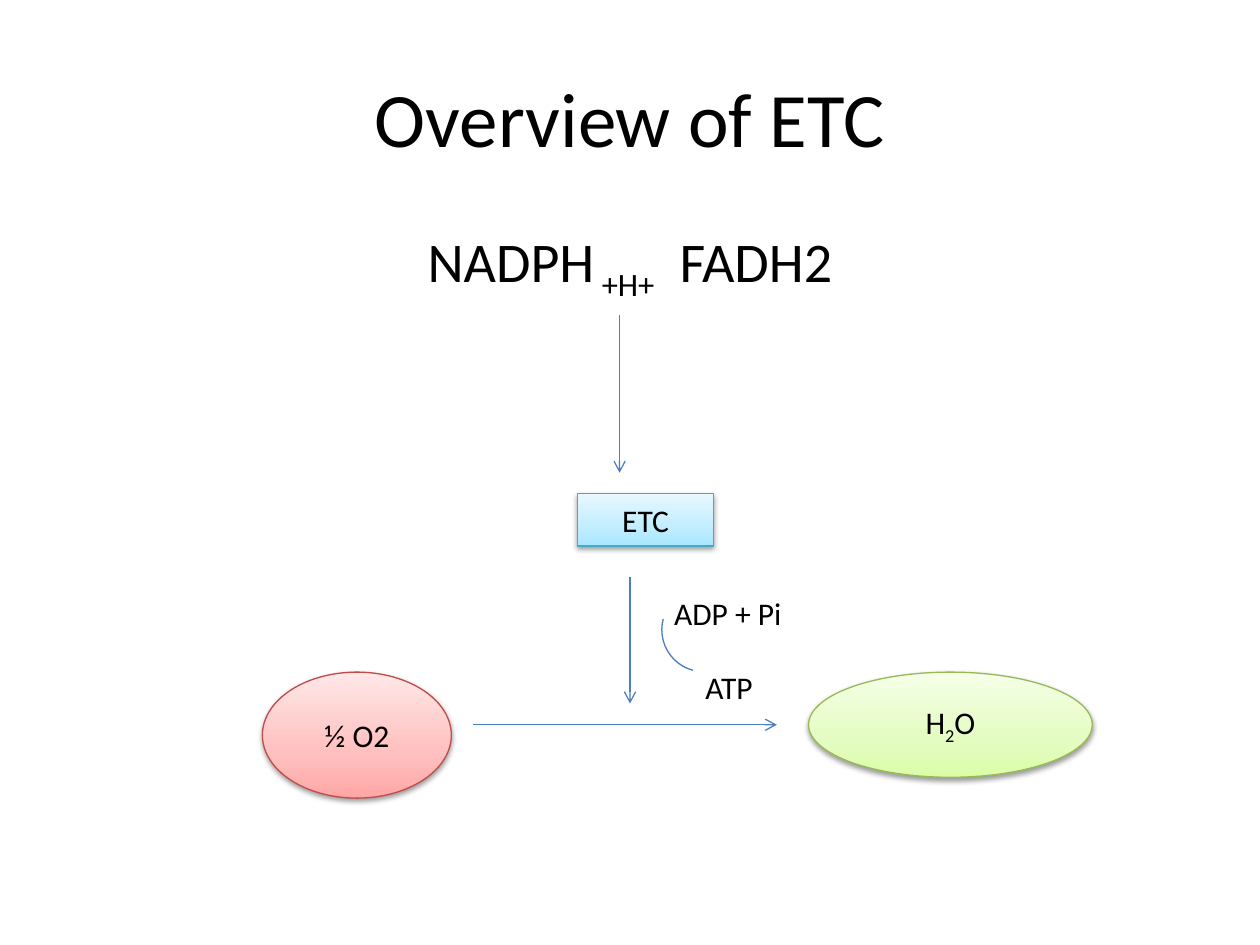
from copy import deepcopy
from dataclasses import dataclass

from lxml import etree
from pptx import Presentation
from pptx.dml.color import RGBColor
from pptx.enum.shapes import MSO_CONNECTOR, MSO_SHAPE as Shape
from pptx.enum.text import MSO_ANCHOR as Anchor, PP_ALIGN as Align
from pptx.oxml.ns import qn
from pptx.util import Cm, Pt

BLACK = RGBColor(0x00, 0x00, 0x00)
ARROW_BLUE = RGBColor(0x4B, 0x7E, 0xBC)
AQUA_LINE = RGBColor(0x46, 0xAA, 0xC5)
AQUA = (RGBColor(0xA7, 0xE6, 0xFF), RGBColor(0xC1, 0xED, 0xFF), RGBColor(0xE7, 0xF8, 0xFF))
RED_LINE = RGBColor(0xBF, 0x4C, 0x48)
RED = (RGBColor(0xFF, 0xA6, 0xA5), RGBColor(0xFF, 0xC0, 0xBF), RGBColor(0xFF, 0xE7, 0xE7))
GREEN_LINE = RGBColor(0x98, 0xB9, 0x55)
GREEN = (RGBColor(0xDA, 0xFD, 0xA7), RGBColor(0xE4, 0xFC, 0xC2), RGBColor(0xF5, 0xFF, 0xE7))

FONT = "Calibri"
LINE_WIDTH = Pt(0.75)
STOP_POSITIONS = (0, 0.35, 1)


@dataclass(frozen=True)
class Piece:
    text: str
    subscript: bool = False
    spacing: float = 0  # extra points after each character


@dataclass(frozen=True)
class Box:
    left: float
    top: float
    width: float
    height: float

    def lengths(self) -> list:
        return [Cm(v) for v in (self.left, self.top, self.width, self.height)]


@dataclass(frozen=True)
class Label:
    box: Box
    pieces: tuple
    size: int = 18
    align: Align = Align.LEFT
    anchor: Anchor = Anchor.TOP


@dataclass(frozen=True)
class Node:
    kind: Shape
    box: Box
    pieces: tuple
    stops: tuple
    outline: RGBColor


@dataclass(frozen=True)
class Arrow:
    x1: float
    y1: float
    x2: float
    y2: float


LABELS = (
    Label(Box(1.27, 0.76, 22.86, 3.18), (Piece("Overview of ETC"),),
          44, Align.CENTER, Anchor.MIDDLE),
    Label(Box(1.27, 4.45, 22.86, 12.57),
          (Piece("NADPH"), Piece(" +H+", subscript=True),
           Piece(" ", spacing=7.2), Piece("FADH2")),
          32, Align.CENTER),
    Label(Box(13.34, 11.85, 5.29, 1.03), (Piece("ADP + Pi"),)),
    Label(Box(13.97, 13.34, 2.54, 1.03), (Piece("ATP"),)),
)
NODES = (
    Node(Shape.RECTANGLE, Box(11.64, 9.95, 2.75, 1.06), (Piece("ETC"),), AQUA, AQUA_LINE),
    Node(Shape.OVAL, Box(5.29, 13.55, 3.81, 2.54), (Piece("½ O2"),), RED, RED_LINE),
    Node(Shape.OVAL, Box(16.3, 13.55, 5.72, 2.12),
         (Piece("H"), Piece("2", subscript=True), Piece("O")), GREEN, GREEN_LINE),
)
ARROWS = (
    Arrow(12.49, 6.35, 12.49, 9.53),    # carriers to ETC
    Arrow(12.7, 11.64, 12.7, 14.18),    # ETC to the reaction
    Arrow(9.53, 14.61, 15.66, 14.61),   # oxygen to water
)
PHOSPHORYLATION = Box(13.34, 11.85, 1.69, 1.69)


def write(frame, pieces: tuple, size: int, align: Align, anchor: Anchor) -> None:
    frame.word_wrap = True
    frame.vertical_anchor = anchor
    paragraph = frame.paragraphs[0]
    paragraph.alignment = align
    for piece in pieces:
        run = paragraph.add_run()
        run.text = piece.text
        run.font.name = FONT
        run.font.size = Pt(size)
        run.font.color.rgb = BLACK
        properties = run._r.get_or_add_rPr()
        if piece.subscript:
            properties.set("baseline", "-25000")
        if piece.spacing:
            properties.set("spc", str(round(piece.spacing * 100)))


def set_line(shape, color: RGBColor) -> None:
    shape.line.color.rgb = color
    shape.line.width = LINE_WIDTH


def add_label(slide, label: Label) -> None:
    frame = slide.shapes.add_textbox(*label.box.lengths()).text_frame
    write(frame, label.pieces, label.size, label.align, label.anchor)


def add_shadow(shape) -> None:
    shape.shadow.inherit = False
    effects = shape._element.spPr.find(qn("a:effectLst"))
    shadow = etree.SubElement(effects, qn("a:outerShdw"), blurRad="40000",
                              dist="20000", dir="5400000", rotWithShape="0")
    color = etree.SubElement(shadow, qn("a:srgbClr"), val="000000")
    etree.SubElement(color, qn("a:alpha"), val="38000")


def add_node(slide, node: Node) -> None:
    shape = slide.shapes.add_shape(node.kind, *node.box.lengths())
    shape.fill.gradient()
    shape.fill.gradient_angle = 90
    stop_list = shape._element.spPr.find(qn("a:gradFill")).find(qn("a:gsLst"))
    stop_list.append(deepcopy(stop_list[0]))
    for stop, position, color in zip(shape.fill.gradient_stops, STOP_POSITIONS, node.stops):
        stop.position = position
        stop.color.rgb = color
    set_line(shape, node.outline)
    add_shadow(shape)
    write(shape.text_frame, node.pieces, 18, Align.CENTER, Anchor.MIDDLE)


def add_arrow(slide, arrow: Arrow) -> None:
    connector = slide.shapes.add_connector(
        MSO_CONNECTOR.STRAIGHT, Cm(arrow.x1), Cm(arrow.y1), Cm(arrow.x2), Cm(arrow.y2))
    set_line(connector, ARROW_BLUE)
    etree.SubElement(connector.line._get_or_add_ln(), qn("a:tailEnd"), type="arrow")
    etree.SubElement(connector._element.spPr, qn("a:effectLst"))


def add_arc(slide, box: Box, rotation: float) -> None:
    arc = slide.shapes.add_shape(Shape.ARC, *box.lengths())
    arc.rotation = rotation
    arc.fill.background()
    set_line(arc, ARROW_BLUE)
    arc.shadow.inherit = False


def main() -> None:
    deck = Presentation()
    deck.slide_width, deck.slide_height = Cm(25.4), Cm(19.05)
    slide = deck.slides.add_slide(deck.slide_layouts[6])

    # Flow of the electron transport chain
    for arrow in ARROWS:
        add_arrow(slide, arrow)
    for node in NODES:
        add_node(slide, node)
    add_arc(slide, PHOSPHORYLATION, 194.9)

    # Title, carriers and ATP labels
    for label in LABELS:
        add_label(slide, label)

    deck.save("out.pptx")


if __name__ == "__main__":
    main()
